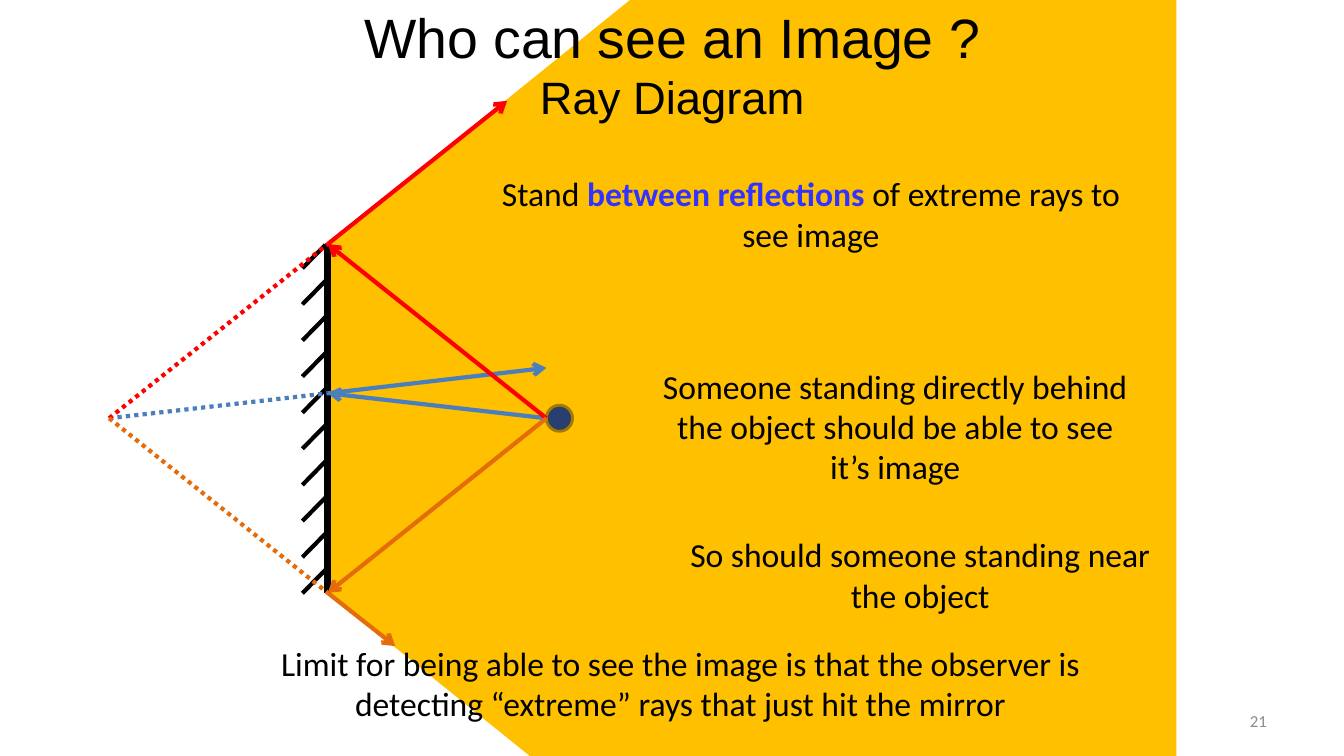
import pptx
import pptx.util
import pptx.dml.color
import pptx.enum.shapes
import pptx.enum.text
import pptx.oxml.ns
import lxml.etree

Cm = pptx.util.Cm
Pt = pptx.util.Pt
SHAPE = pptx.enum.shapes.MSO_SHAPE
ALIGN = pptx.enum.text.PP_ALIGN
ANCHOR = pptx.enum.text.MSO_ANCHOR
qn = pptx.oxml.ns.qn
color = pptx.dml.color.RGBColor.from_string

deck = pptx.Presentation()
deck.slide_width, deck.slide_height = Cm(33.87), Cm(19.05)
slide = deck.slides.add_slide(deck.slide_layouts[6])


def add_ray(start, end, stroke, width=3, arrow=False, dotted=False):
    ray = slide.shapes.add_connector(
        pptx.enum.shapes.MSO_CONNECTOR.STRAIGHT, *[Cm(v) for v in start + end])
    ray.line.color.rgb = color(stroke)
    ray.line.width = Pt(width)
    if dotted:
        ray.line.dash_style = pptx.enum.dml.MSO_LINE.ROUND_DOT
    if arrow:
        lxml.etree.SubElement(ray.line._get_or_add_ln(), qn("a:tailEnd"), type="arrow")
    lxml.etree.SubElement(ray._element.spPr, qn("a:effectLst"))


def add_text(box, runs, font="Calibri", align=ALIGN.CENTER, anchor=ANCHOR.TOP):
    frame = slide.shapes.add_textbox(*[Cm(v) for v in box]).text_frame
    frame.word_wrap = True
    frame.vertical_anchor = anchor
    paragraph = frame.paragraphs[0]
    paragraph.alignment = align
    for words, size, ink, bold in runs:
        if words == "\n":
            paragraph.add_line_break()
            continue
        run = paragraph.add_run()
        run.text = words
        run.font.name = font
        run.font.size = Pt(size)
        run.font.bold = bold
        run.font.color.rgb = color(ink)


mirror_x, mirror_top, mirror_bottom = 8.26, 6.15, 14.94
mirror_top_end = (mirror_x, mirror_top)
mirror_bottom_end = (mirror_x, mirror_bottom)
mirror_hit = (mirror_x, 9.91)
object_point = (13.77, 10.54)
image_point = (2.75, 10.54)
region_width, spread = 21.39, 17.27

for preset, top, height, flips in [
    (SHAPE.RIGHT_TRIANGLE, mirror_bottom, spread, ["flipH", "flipV"]),
    (SHAPE.RIGHT_TRIANGLE, mirror_top - spread, spread, ["flipH"]),
    (SHAPE.RECTANGLE, mirror_top, mirror_bottom - mirror_top, []),
]:
    visible_region = slide.shapes.add_shape(
        preset, Cm(mirror_x), Cm(top), Cm(region_width), Cm(height))
    visible_region.shadow.inherit = False
    visible_region.fill.solid()
    visible_region.fill.fore_color.rgb = color("FFC000")
    visible_region.line.fill.background()
    for flip in flips:
        visible_region._element.spPr.find(qn("a:xfrm")).set(flip, "1")

add_text((5.51, 0, 22.86, 3.18),
         [("Who can see an Image ?", 39.6, "000000", False),
          ("\n", 0, "", False),
          ("Ray Diagram", 32.4, "000000", False)],
         font="Arial", anchor=ANCHOR.MIDDLE)

add_ray(mirror_top_end, mirror_bottom_end, "000000", width=5)
for hatch in range(10):
    hatch_top = 6.17 + 0.91 * hatch
    add_ray((8.2, hatch_top), (7.62, hatch_top + 0.59), "000000")

candle = slide.shapes.add_shape(SHAPE.OVAL, Cm(13.77), Cm(10.21), Cm(0.66), Cm(0.66))
candle.shadow.inherit = False
candle.fill.solid()
candle.fill.fore_color.rgb = color("293F6F")
candle.line.color.rgb = color("A67A00")
candle.line.width = Pt(2)

for hit, reflected_end, stroke in [
    (mirror_hit, (13.77, 9.27), "4B7EBC"),
    (mirror_top_end, (12.78, 2.54), "FF0000"),
    (mirror_bottom_end, (9.96, 16.28), "E46C0A"),
]:
    add_ray(object_point, hit, stroke, arrow=True)
    add_ray(hit, reflected_end, stroke, arrow=True)
    add_ray(image_point, hit, stroke, dotted=True)

add_text((11.86, 4.24, 17.15, 2.31),
         [("Stand ", 24, "000000", False),
          ("between reflections", 24, "3333FF", True),
          (" of extreme rays to see image", 24, "000000", False)])

for box, remark in [
    ((16.31, 9.09, 12.5, 3.33),
     "Someone standing directly behind the object should be able to see it’s image"),
    ((16.94, 13.34, 12.5, 2.31),
     "So should someone standing near the object"),
    ((5.72, 16.08, 22.86, 2.31),
     "Limit for being able to see the image is that the observer is detecting "
     "“extreme” rays that just hit the mirror"),
]:
    add_text(box, [(remark, 24, "000000", False)])

add_text((24.28, 17.65, 7.9, 1.02), [("21", 12, "8C8C8C", False)],
         align=ALIGN.RIGHT, anchor=ANCHOR.MIDDLE)

deck.save("out.pptx")
